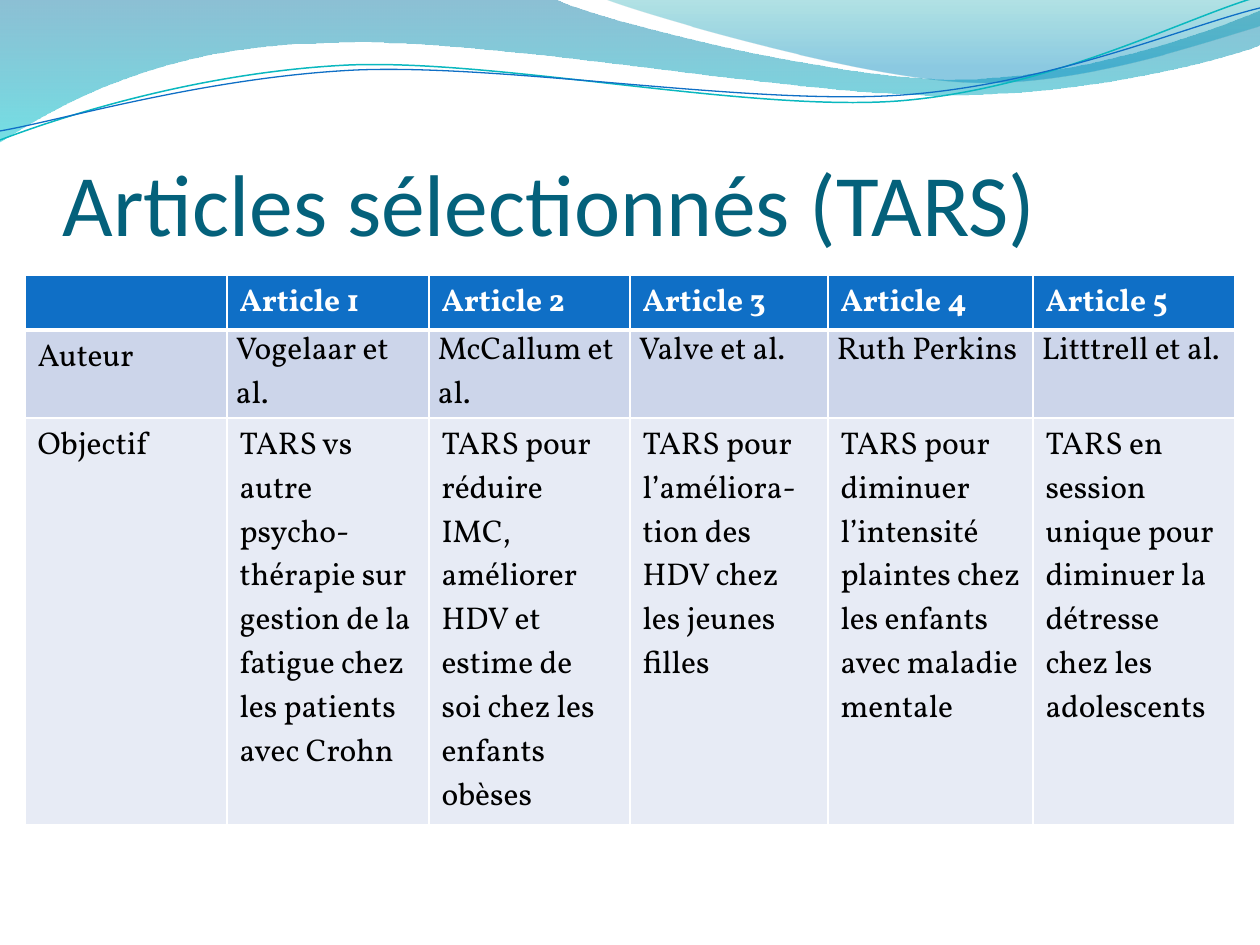
from lxml.etree import SubElement
from pptx import Presentation
from pptx.dml.color import RGBColor
from pptx.enum.text import MSO_ANCHOR
from pptx.oxml.ns import qn
from pptx.util import Pt

EMU_PER_PX = 914400 / 126

WHITE = RGBColor(0xFF, 0xFF, 0xFF)
BLACK = RGBColor(0x00, 0x00, 0x00)
TITLE_TEAL = RGBColor(0x04, 0x61, 0x7B)
BLUE = RGBColor(0x0F, 0x6F, 0xC6)
AQUA = RGBColor(0x0A, 0xB8, 0xBF)
WAVE_TOP = RGBColor(0x00, 0x74, 0xA1)
WAVE_BOTTOM = RGBColor(0x00, 0xC6, 0xCF)
CREST_TOP = RGBColor(0x00, 0xA1, 0xA9)
CREST_BOTTOM = RGBColor(0x00, 0x8B, 0xBF)
BAND_DARK = RGBColor(0xCC, 0xD5, 0xEA)
BAND_LIGHT = RGBColor(0xE7, 0xEB, 0xF5)

# Outlines: a pair is a straight step, six numbers are a cubic curve
WAVE = [(0, 0), (554, -1), (600, 21, 837, 79, 955, 79),
        (1075, 79, 1207, 33, 1260, 11), (1261, 45),
        (1237, 55, 1096, 96, 940, 95), (784, 95, 481, 35, 324, 43),
        (163, 45, 58, 105, -1, 142)]
CREST = [(604, -1), (641, 14, 859, 78, 969, 82),
         (1079, 87, 1211, 40, 1260, 26), (1260, 0)]
AQUA_LINE = [(0, 140), (60, 117, 199, 72, 349, 65),
             (498, 59, 747, 112, 898, 101), (1050, 89, 1182, 19, 1257, -3)]
BLUE_LINE = [(0, 131), (59, 121, 207, 77, 357, 70),
             (508, 64, 752, 106, 903, 95), (1053, 84, 1186, 26, 1260, 8)]

COLUMN_WIDTHS = [202, 202, 201, 198, 205, 202]
ROW_HEIGHTS = [55, 88, 407]
ARTICLES = [
    ["", "Article 1", "Article 2", "Article 3", "Article 4", "Article 5"],
    ["Auteur", "Vogelaar et al.", "McCallum et al.", "Valve et al.",
     "Ruth Perkins", "Litttrell et al."],
    ["Objectif",
     "TARS vs autre psycho-thérapie sur gestion de la fatigue chez les patients avec Crohn",
     "TARS pour réduire IMC, améliorer HDV et estime de soi chez les enfants obèses",
     "TARS pour l’améliora-tion des HDV chez les jeunes filles",
     "TARS pour diminuer l’intensité plaintes chez les enfants avec maladie mentale",
     "TARS en session unique pour diminuer la détresse chez les adolescents"],
]


def px(length):
    return round(length * EMU_PER_PX)


class SlideBuilder:
    title_font = "Calibri"
    body_font = "Vollkorn"
    body_size = 18

    def __init__(self, slide):
        self.slide = slide

    def add_run(self, paragraph, text, font, size, color, bold=False):
        run = paragraph.add_run()
        run.text = text
        run.font.name = font
        run.font.size = Pt(size)
        run.font.bold = bold
        run.font.color.rgb = color

    def outline(self, steps, closed):
        ends = [(px(step[-2]), px(step[-1])) for step in steps]
        builder = self.slide.shapes.build_freeform(*ends[0])
        builder.add_line_segments(ends[1:], close=closed)
        shape = builder.convert_to_shape()
        shape.shadow.inherit = False
        # Bend the straight segments that have control points
        segments = list(shape._element.iter(qn("a:lnTo")))
        for segment, step in zip(segments, steps[1:]):
            if len(step) == 6:
                bend = segment.makeelement(qn("a:cubicBezTo"))
                for x, y in zip(step[::2], step[1::2]):
                    SubElement(bend, qn("a:pt"), x=str(px(x) - shape.left),
                               y=str(px(y) - shape.top))
                segment.getparent().replace(segment, bend)
        return shape

    def gradient_area(self, steps, stops):
        area = self.outline(steps, True)
        area.line.fill.background()
        area.fill.gradient()
        area.fill.gradient_angle = 270
        for stop, (position, color, _) in zip(area.fill.gradient_stops, stops):
            stop.position = position
            stop.color.rgb = color
        colors = area._element.spPr.iter(qn("a:srgbClr"))
        for element, (_, _, opacity) in zip(list(colors), stops):
            SubElement(element, qn("a:alpha"), val=str(opacity * 1000))

    def curve(self, steps, color, width):
        curve = self.outline(steps, False)
        curve.fill.background()
        curve.line.color.rgb = color
        curve.line.width = Pt(width)

    def title(self, text, left, top, width, height):
        box = self.slide.shapes.add_textbox(px(left), px(top), px(width), px(height))
        frame = box.text_frame
        frame.word_wrap = True
        frame.vertical_anchor = MSO_ANCHOR.BOTTOM
        frame.margin_left = frame.margin_right = frame.margin_bottom = 0
        self.add_run(frame.paragraphs[0], text, self.title_font, 50, TITLE_TEAL)

    def border(self, cell, side, width):
        line = SubElement(cell._tc.get_or_add_tcPr(), qn(f"a:ln{side}"), w=str(Pt(width)))
        SubElement(SubElement(line, qn("a:solidFill")), qn("a:srgbClr"), val=str(WHITE))

    def table(self, rows, left, top, widths, heights):
        table = self.slide.shapes.add_table(
            len(rows), len(widths), px(left), px(top),
            px(sum(widths)), px(sum(heights))).table
        for column, width in zip(table.columns, widths):
            column.width = px(width)
        for row, height in zip(table.rows, heights):
            row.height = px(height)
        for r, texts in enumerate(rows):
            header = r == 0
            for c, text in enumerate(texts):
                cell = table.cell(r, c)
                # The rule under the header is heavier
                for side in "LRTB":
                    heavy = (r, side) in ((0, "B"), (1, "T"))
                    self.border(cell, side, 3 if heavy else 1)
                cell.fill.solid()
                cell.fill.fore_color.rgb = (BLUE, BAND_DARK, BAND_LIGHT)[r]
                # Author names sit tight against the cell edges
                if r == 1 and c > 0:
                    cell.margin_left = cell.margin_right = px(9)
                    cell.margin_top = cell.margin_bottom = 0
                if text:
                    self.add_run(cell.text_frame.paragraphs[0], text, self.body_font,
                                 self.body_size, WHITE if header else BLACK, header)


def main():
    deck = Presentation()
    deck.slide_width, deck.slide_height = px(1260), px(945)
    builder = SlideBuilder(deck.slides.add_slide(deck.slide_layouts[6]))

    # Wave decoration
    builder.gradient_area(WAVE, [(0, WAVE_TOP, 45), (1, WAVE_BOTTOM, 55)])
    builder.gradient_area(CREST, [(0, CREST_TOP, 30), (0.8, CREST_BOTTOM, 45)])
    builder.curve(AQUA_LINE, AQUA, 0.85)
    builder.curve(BLUE_LINE, BLUE, 0.75)

    # Title and table of articles
    builder.title("Articles sélectionnés (TARS)", 63, 97, 1134, 157)
    builder.table(ARTICLES, 25, 275, COLUMN_WIDTHS, ROW_HEIGHTS)

    deck.save("out.pptx")


if __name__ == "__main__":
    main()
